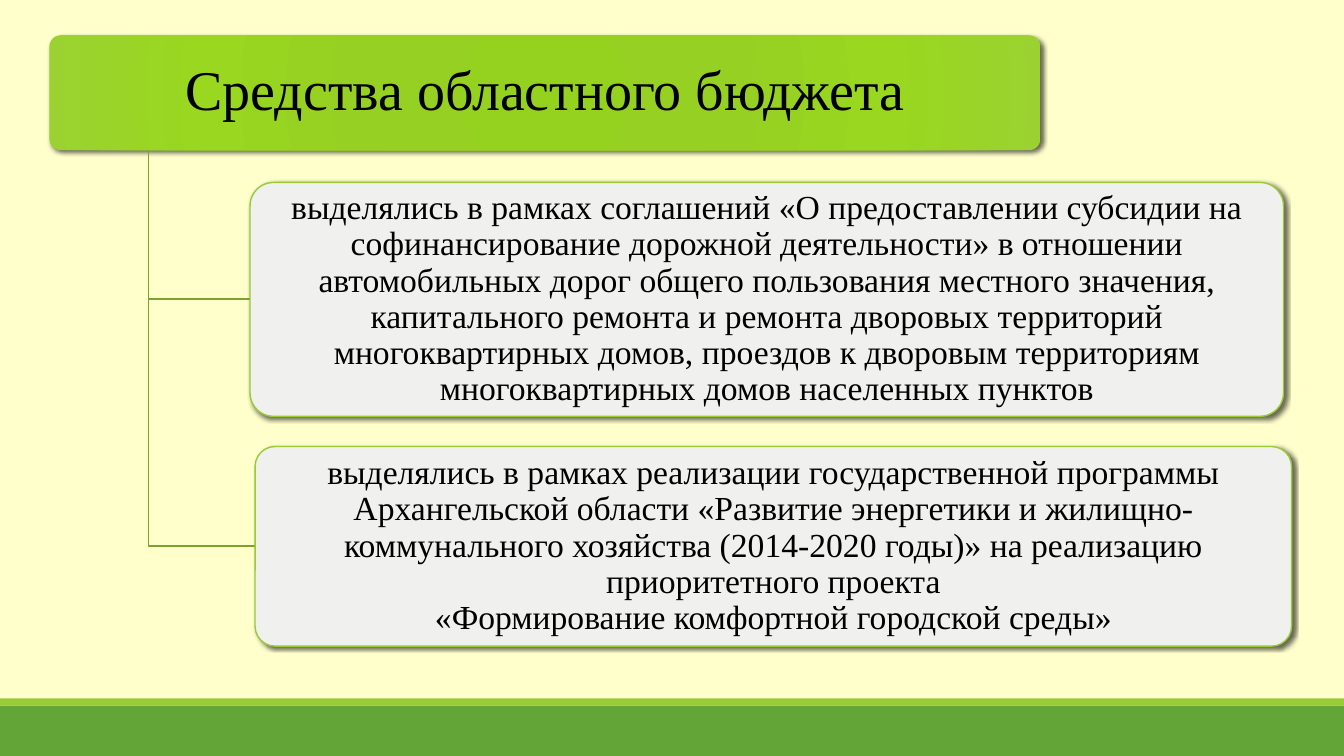
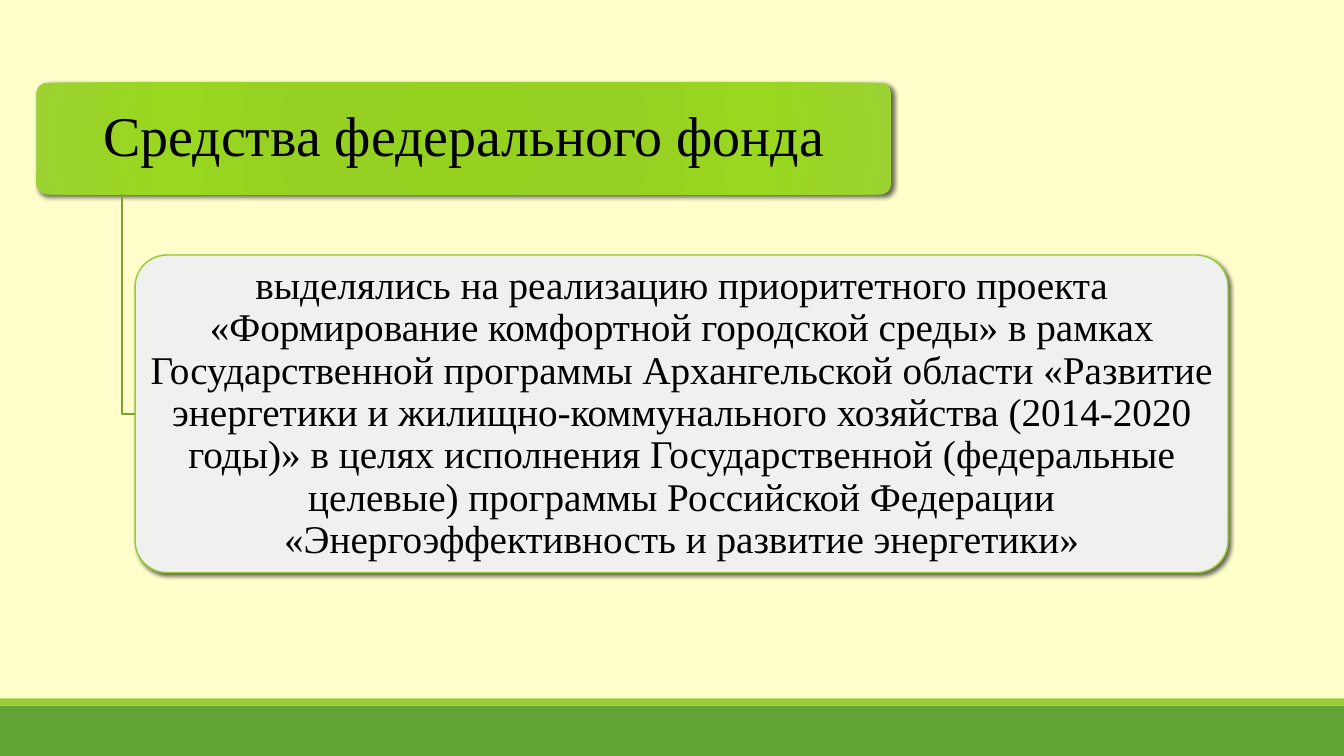
import pptx
import pptx.util
import pptx.oxml
import pptx.dml.color
import pptx.enum.shapes
import pptx.enum.text
from pptx.util import Inches, Pt

COLORS = {"page": "FFFFCC", "band": "63A537", "stripe": "99CB38",
          "elbow": "7BA32D", "box": "F0F0EE", "text": "000000"}
HEADER_STOPS = [(0, "95D220"), (34, "96D023"), (70, "99D720"), (100, "9BD231")]
FONT = "Times New Roman"
NS = 'xmlns:a="http://schemas.openxmlformats.org/drawingml/2006/main"'
MSO = pptx.enum.shapes.MSO_SHAPE

SLIDES = [
    {"title": "Средства областного бюджета",
     "header": (0.49, 0.35, 9.83, 1.14),
     "size": 24, "inset": (0.05, 0.03),
     "boxes": [
         ((2.48, 1.81, 10.25, 2.32),
          ["выделялись в рамках соглашений «О предоставлении субсидии на софинансирование "
           "дорожной деятельности» в отношении автомобильных дорог общего пользования "
           "местного значения, капитального ремонта и ремонта дворовых территорий "
           "многоквартирных домов, проездов к дворовым территориям многоквартирных домов "
           "населенных пунктов"]),
         ((2.53, 4.43, 10.28, 1.98),
          ["выделялись в рамках реализации государственной программы Архангельской области "
           "«Развитие энергетики и жилищно-коммунального хозяйства (2014-2020 годы)» на "
           "реализацию приоритетного проекта",
           "«Формирование комфортной городской среды»"])]},
    {"title": "Средства федерального фонда",
     "header": (0.36, 0.82, 8.48, 1.11),
     "size": 28, "inset": (0.06, 0.04),
     "boxes": [
         ((1.34, 2.53, 10.84, 3.15),
          ["выделялись на реализацию приоритетного проекта «Формирование комфортной городской "
           "среды» в рамках Государственной программы Архангельской области «Развитие "
           "энергетики и жилищно-коммунального хозяйства (2014-2020 годы)» в целях исполнения "
           "Государственной (федеральные целевые) программы Российской Федерации "
           "«Энергоэффективность и развитие энергетики»"])]},
]


def rgb(name):
    return pptx.dml.color.RGBColor.from_string(COLORS[name])


def write(tf, lines, size, inset):
    tf.word_wrap = True
    tf.auto_size = pptx.enum.text.MSO_AUTO_SIZE.NONE
    tf.vertical_anchor = pptx.enum.text.MSO_ANCHOR.MIDDLE
    tf.margin_left = tf.margin_right = Inches(inset[0])
    tf.margin_top = tf.margin_bottom = Inches(inset[1])
    for i, line in enumerate(lines):
        p = tf.add_paragraph() if i else tf.paragraphs[0]
        p.text = line
        p.alignment = pptx.enum.text.PP_ALIGN.CENTER
        p.line_spacing = 0.9
        p.font.name = FONT
        p.font.size = Pt(size)
        p.font.color.rgb = rgb("text")


prs = pptx.Presentation()
prs.slide_width, prs.slide_height = Inches(13.33), Inches(7.5)
master = prs.slide_master
layout = prs.slide_layouts[5]
slides = [prs.slides.add_slide(layout) for _ in SLIDES]

# Shared background and bottom bands, kept on the master
master.background.fill.solid()
master.background.fill.fore_color.rgb = rgb("page")
for i, (name, top, height) in enumerate([("band", 7, 0.5), ("stripe", 6.93, 0.07)]):
    band = slides[0].shapes.add_shape(MSO.RECTANGLE, 0, Inches(top),
                                      prs.slide_width, Inches(height))
    band.shadow.inherit = False
    band.fill.solid()
    band.fill.fore_color.rgb = rgb(name)
    band.line.fill.background()
    band.element.nvSpPr.cNvPr.set("id", str(100 + i))
    master.shapes.element.insert(2 + i, band.element)

for s, data in zip(slides, SLIDES):
    cards = []

    # Header bar with radial gradient, title on top of it
    x, y, w, h = data["header"]
    place = [Inches(v) for v in data["header"]]
    header = s.shapes.add_shape(MSO.ROUNDED_RECTANGLE, *place)
    header.line.fill.background()
    stops = "".join(f'<a:gs pos="{pos * 1000}"><a:srgbClr val="{color}"/></a:gs>'
                    for pos, color in HEADER_STOPS)
    header.element.spPr.insert(2, pptx.oxml.parse_xml(
        f'<a:gradFill {NS} rotWithShape="1"><a:gsLst>{stops}</a:gsLst><a:path path="circle">'
        '<a:fillToRect l="50000" t="50000" r="50000" b="50000"/></a:path></a:gradFill>'))
    cards.append((header, 3.5))
    title = s.shapes.title
    title.left, title.top, title.width, title.height = place
    write(title.text_frame, [data["title"]], 40, (0.12, 0.1))
    header.element.addnext(title.element)

    # Boxes, each hung on an elbow line from the header
    trunk = x + w / 10
    for (left, top, width, height), lines in data["boxes"]:
        middle = top + height / 2
        pen = s.shapes.build_freeform(Inches(trunk), Inches(y + h))
        pen.add_line_segments([(Inches(trunk), Inches(middle)),
                               (Inches(left), Inches(middle))], close=False)
        elbow = pen.convert_to_shape()
        elbow.shadow.inherit = False
        elbow.fill.background()
        elbow.line.color.rgb = rgb("elbow")
        elbow.line.width = Pt(1.25)

        box = s.shapes.add_shape(MSO.ROUNDED_RECTANGLE, Inches(left), Inches(top),
                                 Inches(width), Inches(height))
        box.fill.solid()
        box.fill.fore_color.rgb = rgb("box")
        box.line.color.rgb = rgb("stripe")
        box.line.width = Pt(1)
        write(box.text_frame, lines, data["size"], data["inset"])
        cards.append((box, 3))

    # Rounded corners and soft shadows
    for card, blur in cards:
        card.adjustments[0] = 0.1
        card.element.spPr.append(pptx.oxml.parse_xml(
            f'<a:effectLst {NS}><a:outerShdw blurRad="{Pt(blur)}" dist="{Pt(2)}" dir="2700000" '
            'rotWithShape="0"><a:srgbClr val="000000"><a:alpha val="60000"/></a:srgbClr>'
            '</a:outerShdw></a:effectLst>'))

prs.save("out.pptx")
